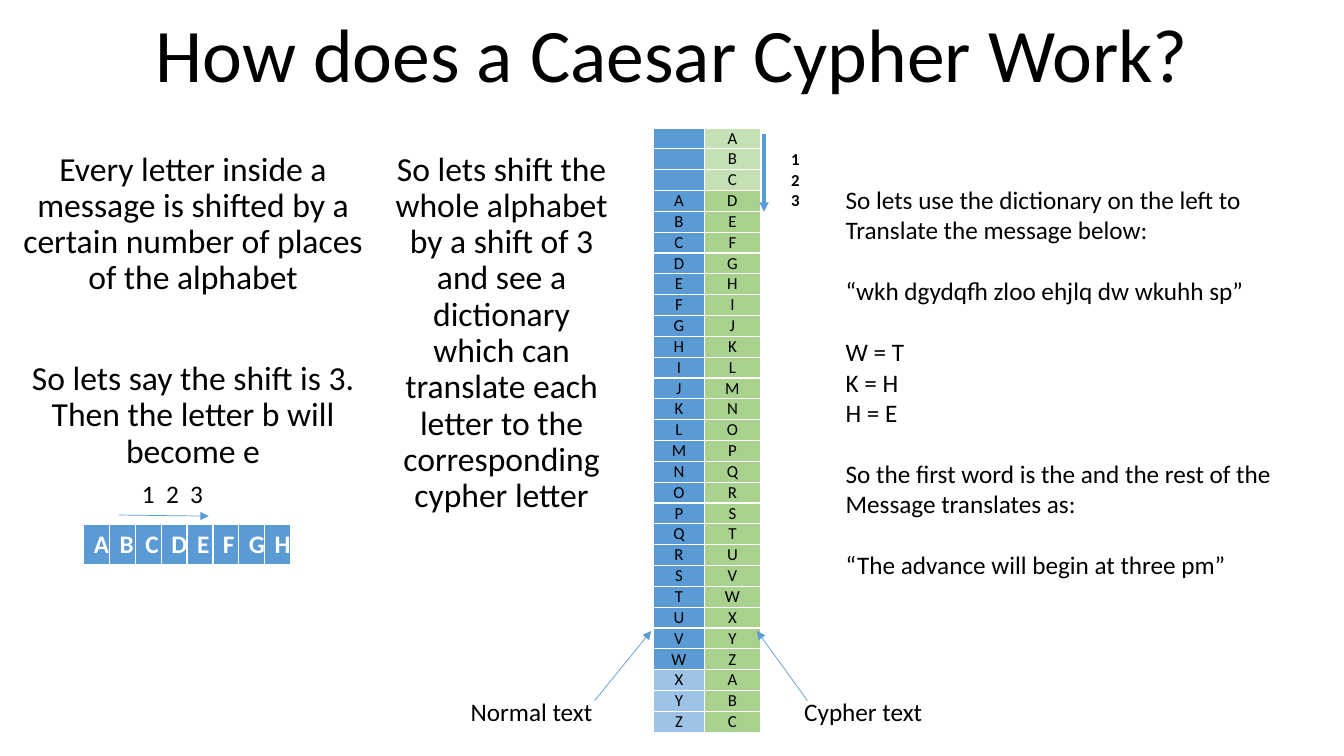
from lxml.etree import SubElement
from pptx import Presentation
from pptx.dml.color import RGBColor
from pptx.enum.shapes import MSO_CONNECTOR
from pptx.enum.text import MSO_ANCHOR, PP_ALIGN
from pptx.oxml import parse_xml
from pptx.oxml.ns import nsdecls, qn
from pptx.util import Inches, Pt

COLORS = {
    "black": "000000",
    "white": "FFFFFF",
    "blue": "5B9BD5",
    "light_blue": "9DC3E6",
    "green": "A9D18E",
    "light_green": "C5E0B4",
}
FONT = "Calibri"
ALPHABET = "ABCDEFGHIJKLMNOPQRSTUVWXYZ"
SHIFT = 3
LEFT, CENTER = PP_ALIGN.LEFT, PP_ALIGN.CENTER

prs = Presentation()
prs.slide_width, prs.slide_height = Inches(13.333), Inches(7.5)
COL, ROW = prs.slide_width / 100, prs.slide_height / 100
slide = prs.slides.add_slide(prs.slide_layouts[6])


def write(tf, paragraphs, size, color="black", bold=False, align=LEFT, spacing=1.0):
    """Fill a text frame from (space before in points, list of runs) pairs."""
    for i, (before, runs) in enumerate(paragraphs):
        p = tf.paragraphs[0] if i == 0 else tf.add_paragraph()
        p.alignment = align
        p.line_spacing = spacing
        p.space_before = Pt(before)
        p._p.get_or_add_endParaRPr().set("sz", str(size * 100))
        for text in runs:
            r = p.add_run()
            r.text = text
            r.font.name = FONT
            r.font.size = Pt(size)
            r.font.bold = bold
            r.font.color.rgb = RGBColor.from_string(COLORS[color])


def style_cell(cell, fill, bottom=1):
    """Give a cell its fill and white borders; bottom is a width in points."""
    cell.fill.solid()
    cell.fill.fore_color.rgb = RGBColor.from_string(COLORS[fill])
    tc_pr = cell._tc.get_or_add_tcPr()
    for i, (side, width) in enumerate(zip("LRTB", (1, 1, 1, bottom))):
        tc_pr.insert(i, parse_xml(
            f'<a:ln{side} {nsdecls("a")} w="{Pt(width)}"><a:solidFill>'
            f'<a:srgbClr val="{COLORS["white"]}"/></a:solidFill></a:ln{side}>'))


# Text: left, top, width, height in columns and rows, then the style
texts = [
    ((0, 1.2, 100, 12.53), 54, False, CENTER, 0.9,
     [(0, ["How does a Caesar Cypher Work?"])]),
    ((0.45, 19.47, 27.83, 79.2), 24, False, CENTER, 0.9,
     [(10, ["Every letter inside a message is shifted by a certain number "
            "of places of the alphabet"]),
      (46, ["So lets say the shift is 3. Then the letter b will become e"])]),
    ((28.28, 19.47, 18.08, 79.2), 24, False, CENTER, 0.9,
     [(10, ["So lets shift the whole alphabet by a shift of 3 and see a "
            "dictionary which can translate each letter to the "
            "corresponding cypher letter"])]),
    ((9.83, 62.67, 10.43, 5.33), 18, False, LEFT, 1.0,
     [(0, ["1", " ", "2", " ", "3"])]),
    ((58.13, 19.07, 9.08, 9.47), 12, True, LEFT, 1.0,
     [(0, ["1"]), (0, ["2"]), (0, ["3"])]),
    ((62.18, 23.73, 35, 53.87), 18, False, LEFT, 1.0,
     [(0, ["So lets use the dictionary on the left to"]),
      (0, ["Translate the message below:"]),
      (22, ["“wkh dgydqfh zloo ehjlq dw wkuhh sp”"]),
      (22, ["W = T"]),
      (0, ["K = H"]),
      (0, ["H = E"]),
      (22, ["So the first word is the and the rest of the"]),
      (0, ["Message translates as:"]),
      (22, ["“The advance will begin at three pm”"])]),
    ((59.1, 91.47, 10.43, 5.33), 18, False, LEFT, 1.0, [(0, ["Cypher text"])]),
    ((34.28, 91.47, 11.1, 5.33), 18, False, LEFT, 1.0, [(0, ["Normal text"])]),
]
for (x, y, w, h), size, bold, align, spacing, paragraphs in texts:
    box = slide.shapes.add_textbox(int(x * COL), int(y * ROW), int(w * COL), int(h * ROW))
    tf = box.text_frame
    tf.word_wrap = True
    if size == 54:
        tf.vertical_anchor = MSO_ANCHOR.BOTTOM
    write(tf, paragraphs, size, bold=bold, align=align, spacing=spacing)
    for r in tf.paragraphs[0].runs:
        if r.text == " ":
            r.font._element.set("spc", "400")

# Strip of the first eight letters
strip = slide.shapes.add_table(
    1, 8, int(6.23 * COL), int(69.33 * ROW), int(15.4 * COL), int(5.47 * ROW)).table
strip.first_row = strip.horz_banding = False
for letter, cell in zip(ALPHABET, strip.rows[0].cells):
    style_cell(cell, "blue", bottom=3)
    write(cell.text_frame, [(0, [letter])], 18, "white", True, CENTER)

# Dictionary: normal letters beside the cypher letters
count = len(ALPHABET) + SHIFT
dictionary = slide.shapes.add_table(
    count, 2, int(48.6 * COL), int(16.93 * ROW), int(7.96 * COL), int(80 * ROW)).table
dictionary.first_row = dictionary.horz_banding = False
for column, width in zip(dictionary.columns, (3.83, 4.13)):
    column.width = int(width * COL)
for i in range(count):
    normal = ALPHABET[i - SHIFT] if i >= SHIFT else ""
    cypher = ALPHABET[i % len(ALPHABET)]
    fills = ("light_blue" if i >= len(ALPHABET) else "blue",
             "light_green" if i < SHIFT else "green")
    for cell, letter, fill in zip(dictionary.rows[i].cells, (normal, cypher), fills):
        style_cell(cell, fill)
        cell.vertical_anchor = MSO_ANCHOR.MIDDLE
        cell.margin_left = cell.margin_right = Inches(0.01)
        cell.margin_top = cell.margin_bottom = 0
        write(cell.text_frame, [(0, [letter] if letter else [])], 12, align=CENTER)

# Arrows: start, end in columns and rows, line width in points
arrows = [
    (8.85, 68.13, 15.53, 68.27, 0.5),
    (56.85, 17.73, 56.85, 28, 2.25),
    (44.25, 92.67, 48.45, 83.47, 0.5),
    (60.08, 92.67, 56.33, 83.47, 0.5),
]
for x1, y1, x2, y2, width in arrows:
    arrow = slide.shapes.add_connector(
        MSO_CONNECTOR.STRAIGHT,
        int(x1 * COL), int(y1 * ROW), int(x2 * COL), int(y2 * ROW))
    arrow.line.width = Pt(width)
    arrow.line.color.rgb = RGBColor.from_string(COLORS["blue"])
    SubElement(arrow.line._get_or_add_ln(), qn("a:tailEnd"), type="triangle")
    SubElement(arrow._element.spPr, qn("a:effectLst"))

prs.save("out.pptx")
